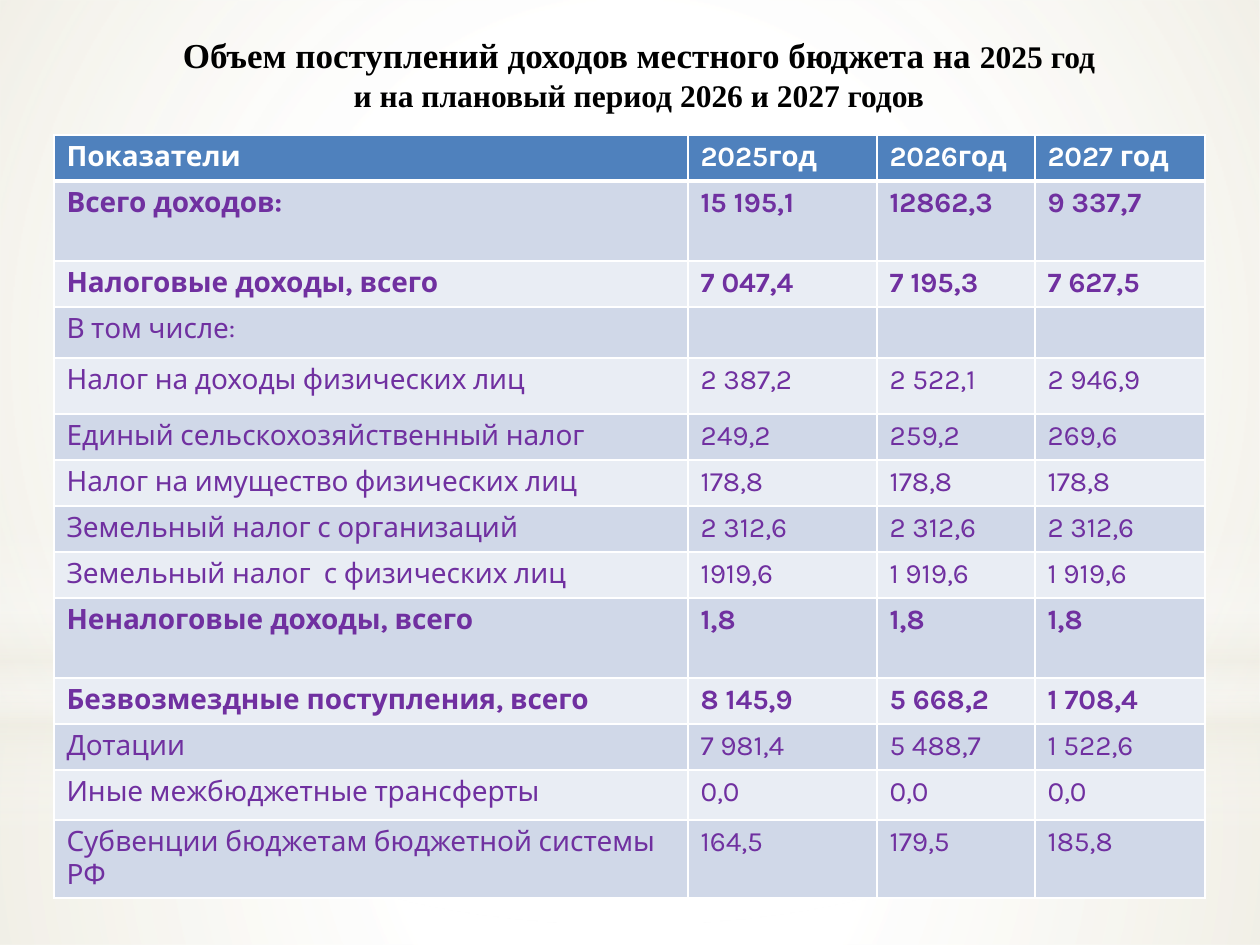
from dataclasses import dataclass

from lxml import etree
from pptx import Presentation
from pptx.dml.color import RGBColor
from pptx.enum.shapes import MSO_SHAPE
from pptx.enum.text import MSO_ANCHOR, PP_ALIGN
from pptx.oxml.ns import qn
from pptx.util import Pt

RECT, OVAL = MSO_SHAPE.RECTANGLE, MSO_SHAPE.OVAL
CENTER, MIDDLE = PP_ALIGN.CENTER, MSO_ANCHOR.MIDDLE
SCALE = 914400 / 126  # EMU in one px


@dataclass(frozen=True)
class Theme:
    white: str = "FFFFFF"
    cream: str = "EEECE1"
    black: str = "000000"
    head: str = "4F81BD"
    bands: tuple = ("D0D8E8", "E9EDF4")
    body: str = "7030A0"
    sans: str = "Karla"
    serif: str = "Times New Roman"
    cell: int = 16
    lead: int = 20
    title: int = 18


THEME = Theme()

# Column widths, then rows: height, bold, texts
COLS = (634, 189, 158, 170)
ROWS = (
    (46, True, ("Показатели", "2025год", "2026год", "2027 год")),
    (80, True, ("Всего доходов:", "15 195,1", "12862,3", "9 337,7")),
    (46, True, ("Налоговые доходы, всего", "7 047,4", "7 195,3", "7 627,5")),
    (50, False, ("В том числе:", "", "", "")),
    (56, False, ("Налог на доходы физических лиц", "2 387,2", "2 522,1", "2 946,9")),
    (46, False, ("Единый сельскохозяйственный налог", "249,2", "259,2", "269,6")),
    (46, False, ("Налог на имущество физических лиц", "178,8", "178,8", "178,8")),
    (46, False, ("Земельный налог с организаций", "2 312,6", "2 312,6", "2 312,6")),
    (46, False, ("Земельный налог  с физических лиц", "1919,6", "1 919,6", "1 919,6")),
    (80, True, ("Неналоговые доходы, всего", "1,8", "1,8", "1,8")),
    (46, True, ("Безвозмездные поступления, всего", "8 145,9", "5 668,2", "1 708,4")),
    (46, False, ("Дотации", "7 981,4", "5 488,7", "1 522,6")),
    (50, False, ("Иные межбюджетные трансферты", "0,0", "0,0", "0,0")),
    (78, False, ("Субвенции бюджетам бюджетной системы РФ", "164,5", "179,5", "185,8")),
)


def px(n):
    return round(n * SCALE)


def add(up, tag, **attrs):
    return etree.SubElement(up, qn(tag), {k: str(v) for k, v in attrs.items()})


def style(font, face, size, color, bold):
    font.name, font.size, font.bold = face, Pt(size), bold
    font.color.rgb = RGBColor.from_string(color)


def add_glow(slide, kind, box, stops, radial=True):
    """Borderless shape with a see-through gradient; stops: place, colour, opacity."""
    shape = slide.shapes.add_shape(kind, *map(px, box))
    shape.shadow.inherit = False
    shape.line.fill.background()
    shape.fill.background()
    props = shape._element.spPr
    grad = etree.Element(qn("a:gradFill"), rotWithShape="1")
    props.replace(props.find(qn("a:noFill")), grad)
    group = add(grad, "a:gsLst")
    for place, color, alpha in stops:
        stop = add(group, "a:gs", pos=place * 1000)
        add(add(stop, "a:srgbClr", val=color), "a:alpha", val=alpha * 1000)
    if radial:
        path = add(grad, "a:path", path="circle")
        add(path, "a:fillToRect", **dict.fromkeys("ltrb", 50000))
    else:
        add(grad, "a:lin", ang=90 * 60000, scaled=0)


def add_backdrop(slide):
    white, cream = THEME.white, THEME.cream
    add_glow(slide, RECT, (0, 703, 1260, 242),
             ((0, white, 91), (37, white, 76), (100, cream, 79)))
    add_glow(slide, RECT, (0, 0, 1260, 703),
             ((0, white, 89), (48, white, 62), (100, cream, 79)))
    add_glow(slide, RECT, (0, 519, 1260, 315),
             ((0, white, 0), (29, white, 30), (45, cream, 40),
              (55, white, 26), (65, cream, 60), (100, white, 0)), radial=False)
    add_glow(slide, OVAL, (0, 220, 1260, 703),
             ((0, white, 100), (56, white, 0)))


def set_edges(cell, top, bottom):
    props = cell._tc.get_or_add_tcPr()
    for side, width in (("L", 1), ("R", 1), ("T", top), ("B", bottom)):
        line = add(props, f"a:ln{side}", w=Pt(width))
        add(add(line, "a:solidFill"), "a:srgbClr", val=THEME.white)


def add_budget(slide):
    sizes = sum(COLS), sum(row[0] for row in ROWS)
    frame = slide.shapes.add_table(len(ROWS), len(COLS), *map(px, (54, 135, *sizes)))
    table = frame.table
    table.horz_banding = False
    for col, width in zip(table.columns, COLS):
        col.width = px(width)
    for r, (height, bold, texts) in enumerate(ROWS):
        table.rows[r].height = px(height)
        fill = THEME.bands[(r - 1) % 2] if r else THEME.head
        color = THEME.body if r else THEME.white
        for c, text in enumerate(texts):
            cell = table.cell(r, c)
            set_edges(cell, 3 if r == 1 else 1, 1 if r else 3)
            cell.fill.solid()
            cell.fill.fore_color.rgb = RGBColor.from_string(fill)
            if text:
                cell.text = text
                style(cell.text_frame.paragraphs[0].font, THEME.sans,
                      THEME.cell, color, bold)


def add_title(slide):
    frame = slide.shapes.add_textbox(*map(px, (113, 16, 1052, 115))).text_frame
    frame.word_wrap = True
    frame.vertical_anchor = MIDDLE
    first, second = frame.paragraphs[0], frame.add_paragraph()
    for text, size in (("Объем поступлений доходов местного бюджета на ", THEME.lead),
                       ("2025 год", THEME.title)):
        run = first.add_run()
        run.text = text
        style(run.font, THEME.serif, size, THEME.black, True)
    second.text = "и на плановый период 2026 и 2027 годов"
    style(second.font, THEME.serif, THEME.title, THEME.black, True)
    first.alignment = second.alignment = CENTER


def main():
    deck = Presentation()
    deck.slide_width, deck.slide_height = px(1260), px(945)
    slide = deck.slides.add_slide(deck.slide_layouts[6])
    add_backdrop(slide)
    add_budget(slide)
    add_title(slide)
    deck.save("out.pptx")


if __name__ == "__main__":
    main()
